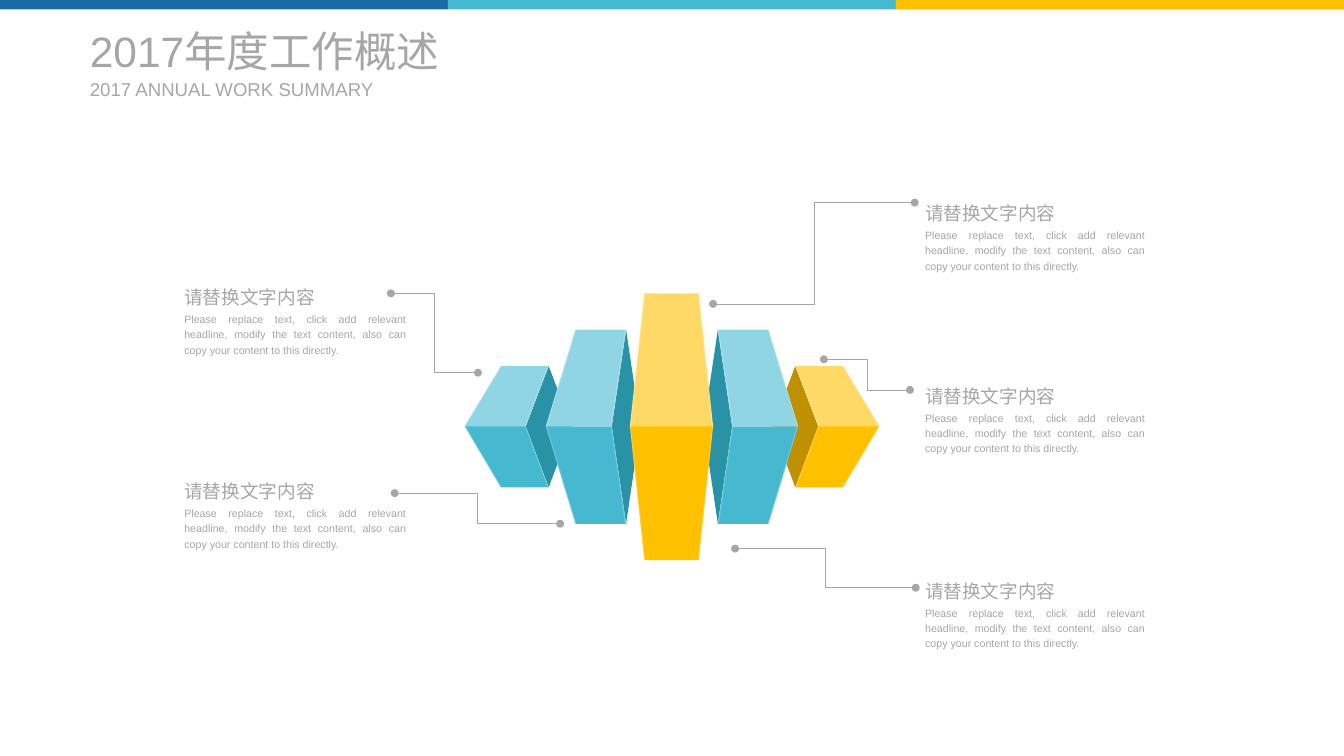
from lxml import etree
from pptx import Presentation
from pptx.dml.color import RGBColor
from pptx.enum.shapes import MSO_CONNECTOR, MSO_SHAPE
from pptx.enum.text import MSO_ANCHOR, MSO_AUTO_SIZE, PP_ALIGN
from pptx.oxml.ns import qn
from pptx.util import Inches, Pt

ELBOW = MSO_CONNECTOR.ELBOW
RECTANGLE = MSO_SHAPE.RECTANGLE
TOP, MIDDLE = MSO_ANCHOR.TOP, MSO_ANCHOR.MIDDLE
LEFT, JUSTIFY = PP_ALIGN.LEFT, PP_ALIGN.JUSTIFY
FIT_SHAPE = MSO_AUTO_SIZE.SHAPE_TO_FIT_TEXT

WIDTH, HEIGHT = 14.06, 7.91
COLORS = {
    "blue": "166CA3", "teal": "46B9D0", "gold": "FFC000", "grey": "A6A6A6",
    "light teal": "90D5E3", "dark teal": "2A92A6",
    "light gold": "FFD966", "dark gold": "BF9000", "white": "FFFFFF",
}

presentation = Presentation()
presentation.slide_width = Inches(WIDTH)
presentation.slide_height = Inches(HEIGHT)
slide = presentation.slides.add_slide(presentation.slide_layouts[5])


def add_face(points, color, opacity=100):
    corners = [(Inches(x), Inches(y)) for x, y in points]
    builder = slide.shapes.build_freeform(*corners[0], scale=1.0)
    builder.add_line_segments(corners[1:], close=True)
    face = builder.convert_to_shape()
    face.shadow.inherit = False
    face.line.fill.background()
    face.fill.solid()
    face.fill.fore_color.rgb = RGBColor.from_string(COLORS[color])
    if opacity < 100:
        color_element = next(face.fill._xPr.iter(qn("a:srgbClr")))
        etree.SubElement(color_element, qn("a:alpha"), val=str(opacity * 1000))


def write_text(shape, text, box, size, alignment, anchor, inset=None, spacing=None):
    for name, value in zip(("left", "top", "width", "height"), box):
        setattr(shape, name, Inches(value))
    frame = shape.text_frame
    frame.text = text
    frame_format = {"word_wrap": True, "auto_size": FIT_SHAPE, "vertical_anchor": anchor}
    if inset is not None:
        for side in ("left", "top", "right", "bottom"):
            frame_format[f"margin_{side}"] = Inches(inset)
    for name, value in frame_format.items():
        setattr(frame, name, value)
    paragraph = frame.paragraphs[0]
    paragraph.alignment = alignment
    paragraph.line_spacing = spacing
    for name, value in {"name": "Arial", "size": Pt(size), "bold": False}.items():
        setattr(paragraph.runs[0].font, name, value)
    paragraph.runs[0].font.color.rgb = RGBColor.from_string(COLORS["grey"])


# Headings
write_text(slide.shapes.title, "2017年度工作概述", (0.94, 0.26, 4.32, 0.54),
           32, LEFT, MIDDLE, inset=0)
write_text(slide.shapes.add_textbox(0, 0, 0, 0), "2017 ANNUAL WORK SUMMARY",
           (0.94, 0.81, 3.07, 0.24), 14, LEFT, MIDDLE, inset=0)

# Slabs: x of front left, top left, top right, front right, back tip; top, bottom
outer_slab = ((4.86, 5.24, 5.74, 5.5, 5.98), 3.83, 5.1)
inner_slab = ((5.71, 6.02, 6.55, 6.4, 6.7), 3.45, 5.48)
center_slab = ((6.59, 6.74, 7.31, 7.46, None), 3.07, 5.86)
SEAM, EDGE = 4.46, 0.01
for (xs, top, bottom), hue, mirrored in (
    (outer_slab, "teal", False),
    (inner_slab, "teal", False),
    (outer_slab, "gold", True),
    (inner_slab, "teal", True),
    (center_slab, "gold", False),
):
    if mirrored:
        xs = [WIDTH - x for x in xs]
    front_left, top_left, top_right, front_right, back = xs
    if back is not None:
        add_face([(front_right, SEAM), (top_right, top), (back, SEAM),
                  (top_right, bottom)], f"dark {hue}")
    for end, color in ((top, f"light {hue}"), (bottom, hue)):
        add_face([(front_left, SEAM), (top_left, end), (top_right, end),
                  (front_right, SEAM)], color)

    # Translucent highlights along the seam and both side edges
    add_face([(front_left, SEAM), (front_right, SEAM),
              (front_right, SEAM + EDGE), (front_left, SEAM + EDGE)], "white", 25)
    inward = -EDGE if mirrored else EDGE
    for corner, front, shift in ((top_left, front_left, inward),
                                 (top_right, front_right, -inward)):
        add_face([(corner, top), (front, SEAM), (corner, bottom),
                  (corner + shift, bottom), (front + shift, SEAM),
                  (corner + shift, top)], "white", 25)

# Captions: left, top, heading width, body width
BODY = ("Please replace text, click add relevant headline, modify the text "
        "content, also can copy your content to this directly.")
for left, top, heading_width, body_width in (
    (1.83, 2.9, 1.65, 2.52),
    (1.83, 4.93, 1.65, 2.52),
    (9.58, 2.02, 1.63, 2.5),
    (9.58, 3.93, 1.63, 2.5),
    (9.58, 5.97, 1.63, 2.5),
):
    write_text(slide.shapes.add_textbox(0, 0, 0, 0), "请替换文字内容",
               (left, top, heading_width, 0.36), 14, JUSTIFY, TOP, spacing=1.2)
    write_text(slide.shapes.add_textbox(0, 0, 0, 0), BODY,
               (left, top + 0.3, body_width, 0.57), 8, JUSTIFY, TOP, spacing=1.2)

# Elbow connectors with round ends
for ends in (
    (5, 3.9, 4.09, 3.07),
    (5.86, 5.48, 4.13, 5.16),
    (9.57, 2.12, 7.46, 3.18),
    (9.52, 4.08, 8.62, 3.76),
    (9.58, 6.15, 7.69, 5.74),
):
    connector = slide.shapes.add_connector(ELBOW, *[Inches(value) for value in ends])
    connector.line.color.rgb = RGBColor.from_string(COLORS["grey"])
    connector.line.width = Pt(0.5)
    line_element = connector.line._get_or_add_ln()
    for tag in ("a:headEnd", "a:tailEnd"):
        etree.SubElement(line_element, qn(tag), type="oval")
    etree.SubElement(connector._element.spPr, qn("a:effectLst"))

# Colour bar across the top
BAR_WIDTH = WIDTH / 3
for index, color in enumerate(("blue", "teal", "gold")):
    bar = slide.shapes.add_shape(RECTANGLE, Inches(index * BAR_WIDTH), 0,
                                 Inches(BAR_WIDTH), Inches(0.1))
    bar.shadow.inherit = False
    bar.line.fill.background()
    bar.fill.solid()
    bar.fill.fore_color.rgb = RGBColor.from_string(COLORS[color])

presentation.save("out.pptx")
